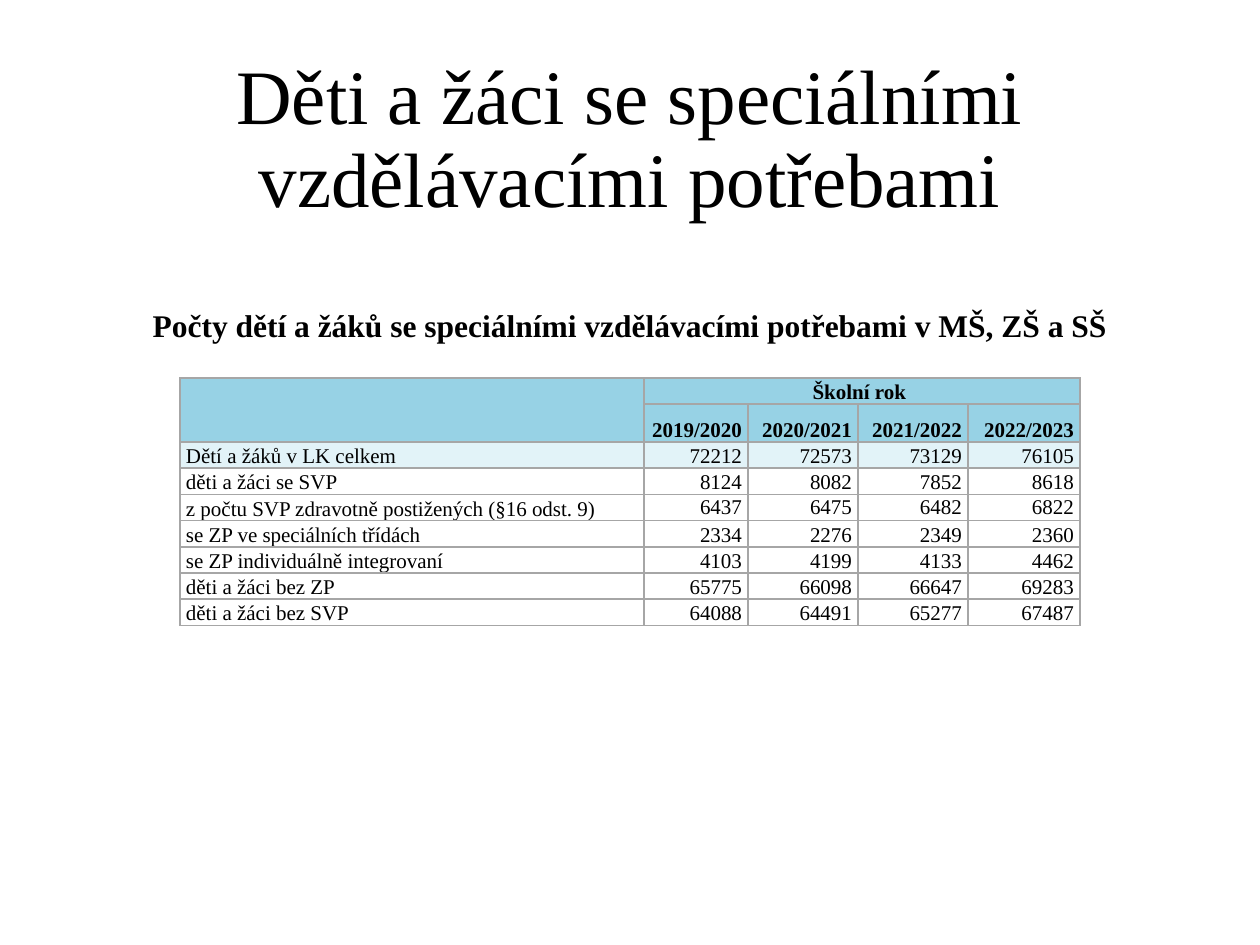
"""Build a slide with counts of children and pupils with special educational needs."""
import pptx
import pptx.dml.color
import pptx.enum.text
import pptx.oxml
import pptx.oxml.ns
import pptx.util

ALIGN = pptx.enum.text.PP_ALIGN
ANCHOR = pptx.enum.text.MSO_ANCHOR
AUTO_SIZE = pptx.enum.text.MSO_AUTO_SIZE

COLORS = {"text": "000000", "header": "97D2E5", "total": "E2F3F8", "border": "A6A6A6"}
YEARS = ["2019/2020", "2020/2021", "2021/2022", "2022/2023"]
COUNTS = [
    ("Dětí a žáků v LK celkem", 72212, 72573, 73129, 76105),
    ("děti a žáci se SVP", 8124, 8082, 7852, 8618),
    ("z počtu SVP zdravotně postižených (§16 odst. 9)", 6437, 6475, 6482, 6822),
    ("se ZP ve speciálních třídách", 2334, 2276, 2349, 2360),
    ("se ZP individuálně integrovaní", 4103, 4199, 4133, 4462),
    ("děti a žáci bez ZP", 65775, 66098, 66647, 69283),
    ("děti a žáci bez SVP", 64088, 64491, 65277, 67487),
]
HEADER_ROWS = 2
DISABLED_ROW = 4


def px(length):
    return pptx.util.Emu(round(length * 914400 / 126))


class SlideBuilder:
    def __init__(self, width, height):
        self.font = "Times New Roman"
        self.deck = pptx.Presentation()
        self.deck.slide_width, self.deck.slide_height = px(width), px(height)
        self.slide = self.deck.slides.add_slide(self.deck.slide_layouts[5])

    def add_text(self, frame, text, size, align, bold=False):
        paragraph = frame.paragraphs[0]
        paragraph.alignment = align
        run = paragraph.add_run()
        run.text = text
        run.font.name, run.font.size, run.font.bold = self.font, pptx.util.Pt(size), bold
        run.font.color.rgb = pptx.dml.color.RGBColor.from_string(COLORS["text"])
        return paragraph

    def title(self, text, left, top, width, height):
        heading = self.slide.shapes.title
        heading.left, heading.top = px(left), px(top)
        heading.width, heading.height = px(width), px(height)
        frame = heading.text_frame
        frame.auto_size, frame.word_wrap = AUTO_SIZE.NONE, True
        frame.vertical_anchor = ANCHOR.MIDDLE
        self.add_text(frame, text, 44, ALIGN.CENTER).line_spacing = 0.9

    def caption(self, text, left, top, width, height):
        box = self.slide.shapes.add_textbox(px(left), px(top), px(width), px(height))
        frame = box.text_frame
        frame.word_wrap, frame.auto_size = True, AUTO_SIZE.SHAPE_TO_FIT_TEXT
        self.add_text(frame, text, 18, ALIGN.CENTER, bold=True)

    def cell(self, cell, text, align, fill, bold, anchor):
        cell.margin_left = cell.margin_right = px(6)
        cell.margin_top = cell.margin_bottom = 0
        cell.vertical_anchor = anchor
        properties = cell._tc.get_or_add_tcPr()
        for side in ("lnL", "lnR", "lnT", "lnB"):
            properties.append(pptx.oxml.parse_xml(
                f'<a:{side} {pptx.oxml.ns.nsdecls("a")} w="12700"><a:solidFill>'
                f'<a:srgbClr val="{COLORS["border"]}"/></a:solidFill></a:{side}>'))
        if fill:
            cell.fill.solid()
            cell.fill.fore_color.rgb = pptx.dml.color.RGBColor.from_string(COLORS[fill])
        else:
            cell.fill.background()
        self.add_text(cell.text_frame, text, 12, align, bold)

    def counts_table(self, rows, left, top, height, column_widths):
        frame = self.slide.shapes.add_table(
            len(rows), len(column_widths), px(left), px(top), px(sum(column_widths)), px(height))
        table = frame.table
        table.first_row = table.horz_banding = False
        for column, width in zip(table.columns, column_widths):
            column.width = px(width)
        for r, row in enumerate(rows):
            table.rows[r].height = px(height / len(rows))
            header = r < HEADER_ROWS
            fill = "header" if header else "total" if r == HEADER_ROWS else None
            for c, value in enumerate(row):
                align = ALIGN.CENTER if r == 0 else ALIGN.RIGHT if c else ALIGN.LEFT
                anchor = ANCHOR.MIDDLE if r == DISABLED_ROW and c else ANCHOR.BOTTOM
                self.cell(table.cell(r, c), str(value), align, fill, header, anchor)
        table.cell(0, 0).merge(table.cell(1, 0))
        table.cell(0, 1).merge(table.cell(0, len(column_widths) - 1))


def main():
    builder = SlideBuilder(1260, 945)
    builder.title("Děti a žáci se speciálními vzdělávacími potřebami", 87, 50, 1086, 183)
    builder.caption("Počty dětí a žáků se speciálními vzdělávacími potřebami v MŠ, ZŠ a SŠ",
                    30, 300, 1200, 50)
    header = [["", "Školní rok ", "", "", ""], ["", *YEARS]]
    builder.counts_table(header + COUNTS, 180, 378, 236, [464, 104, 110, 110, 112])
    builder.deck.save("out.pptx")


if __name__ == "__main__":
    main()
